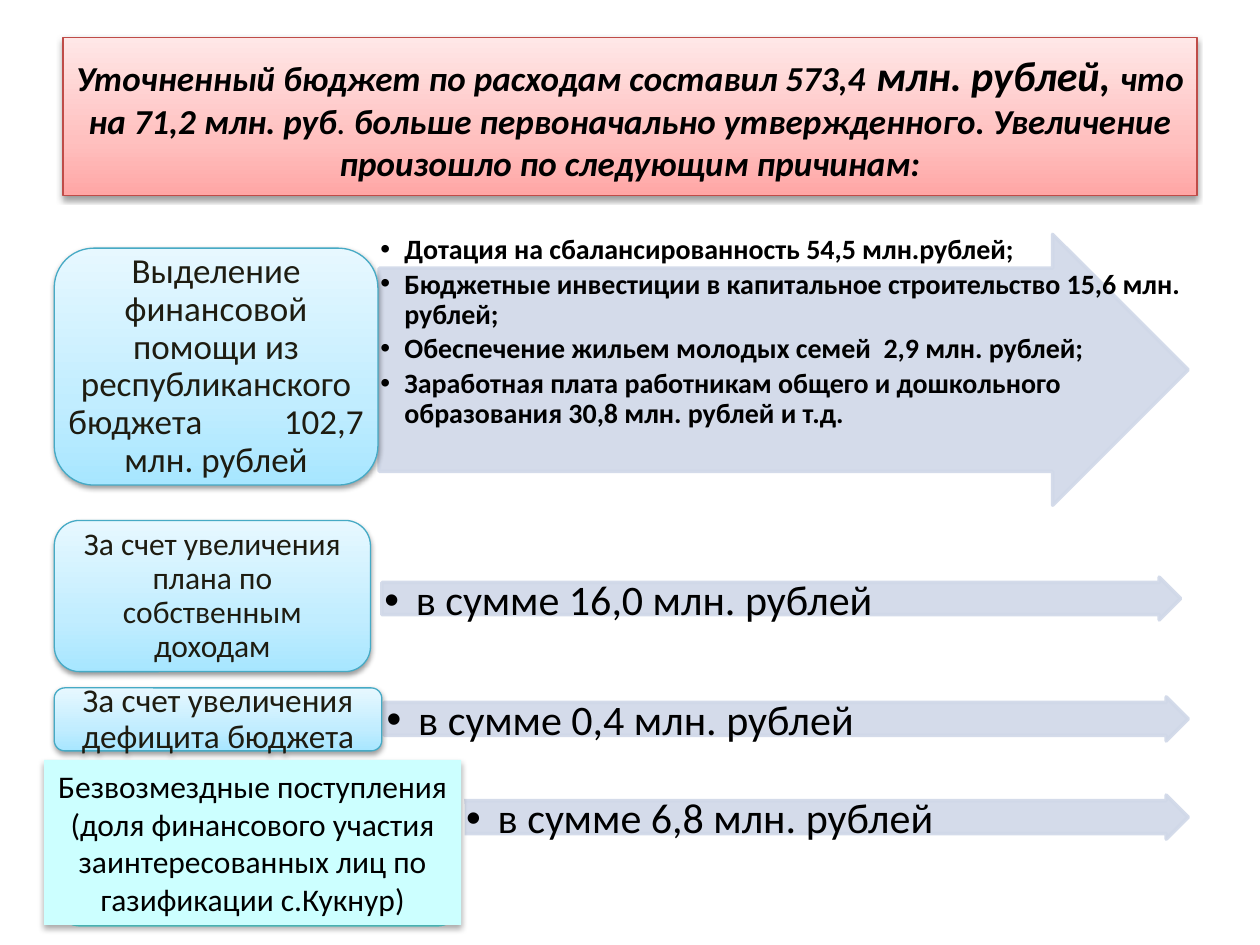
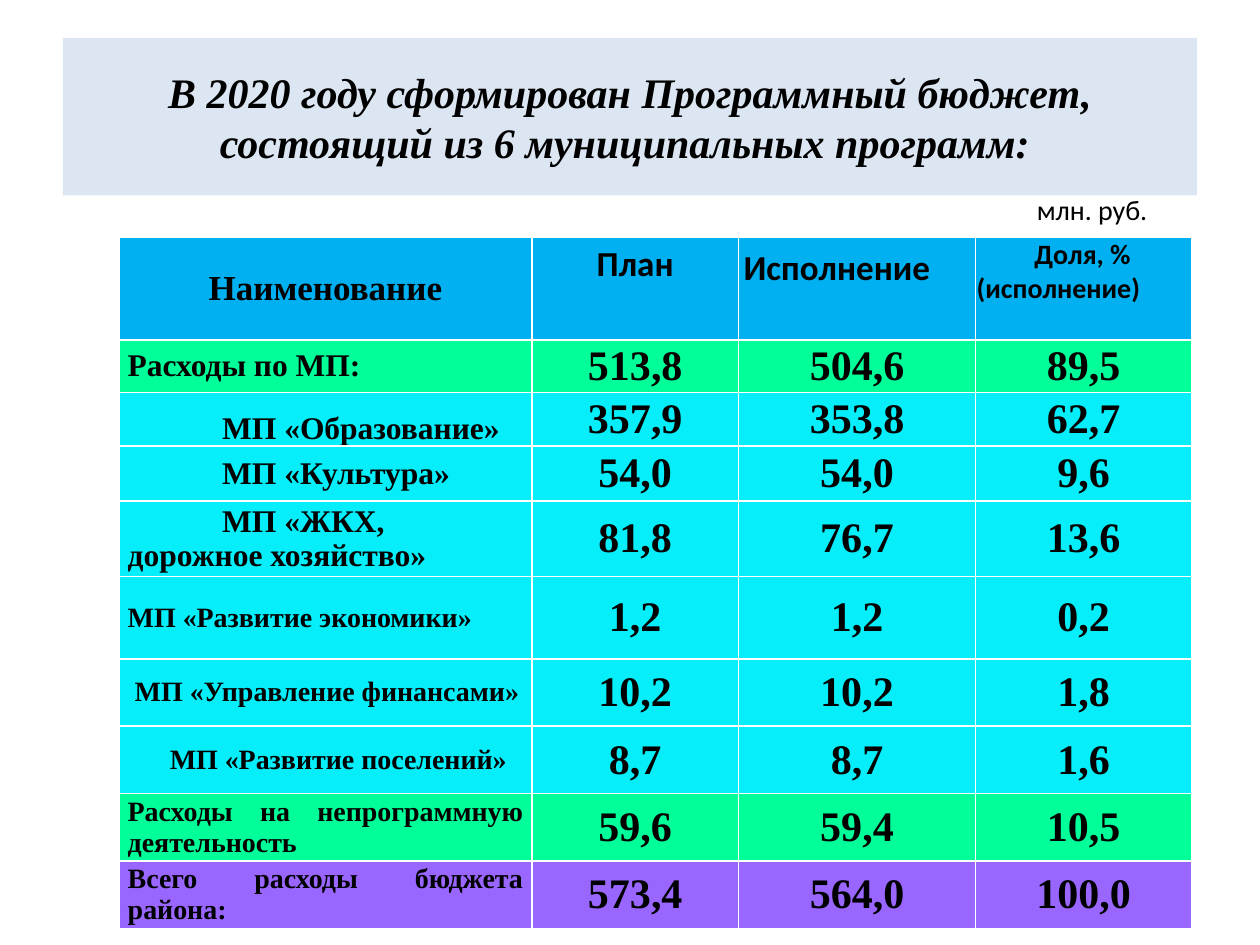
from copy import deepcopy

from lxml.etree import SubElement
from pptx import Presentation
from pptx.dml.color import RGBColor
from pptx.enum.shapes import MSO_SHAPE
from pptx.enum.text import MSO_ANCHOR, PP_ALIGN
from pptx.oxml.ns import qn
from pptx.util import Pt

BLACK = "000000"
ARROW_BLUE = "D0D8E8"
LABEL_INK = "1E1C11"
RED_GRADIENT = ["FFA6A5", "FFC0BF", "FFE7E7"]
BLUE_GRADIENT = ["A7E6FF", "C1EDFF", "E7F8FF"]
GRADIENT_POSITIONS = [0, 0.35, 1]
GREEN, CYAN, VIOLET, HEADER_BLUE = "00FF99", "06EEFA", "9966FF", "00B0F0"
SERIF, SANS = "Times New Roman", "Calibri"
TITLE_BOX = (36, 21.6, 648, 90)
SOFT_SHADOW = {"alpha": 38, "blur": 3.1, "distance": 1.6}
CARD_SHADOW = {"alpha": 32, "blur": 3.5, "distance": 2.2}


def color(value):
    return RGBColor.from_string(value)


def apply_format(target, values):
    for name, value in values.items():
        setattr(target, name, value)


def margins(left, top, right, bottom):
    sides = ("left", "top", "right", "bottom")
    return {f"margin_{side}": Pt(value) for side, value in zip(sides, (left, top, right, bottom))}


def font_format(size, name=SANS, **extra):
    return {"size": Pt(size), "name": name, **extra}


def write_run(paragraph, text, font, ink=BLACK, spacing=None):
    run = paragraph.add_run()
    run.text = text
    apply_format(run.font, font)
    run.font.color.rgb = color(ink)
    if spacing:
        run._r.get_or_add_rPr().set("spc", str(spacing * 100))


def set_indent(paragraph, left, first_line):
    properties = paragraph._p.get_or_add_pPr()
    properties.set("marL", str(Pt(left)))
    properties.set("indent", str(Pt(first_line)))
    return properties


def fill_gradient(shape, colors):
    shape.fill.gradient()
    shape.fill.gradient_angle = 90
    stop_list = shape._element.spPr.find(".//" + qn("a:gsLst"))
    stop_list.append(deepcopy(stop_list[0]))
    for stop, position, value in zip(shape.fill.gradient_stops, GRADIENT_POSITIONS, colors):
        stop.position = position
        stop.color.rgb = color(value)


def add_shadow(shape, alpha, blur, distance):
    effects = shape._element.spPr.find(qn("a:effectLst"))
    shadow = SubElement(effects, qn("a:outerShdw"), blurRad=str(Pt(blur)),
                        dist=str(Pt(distance)), dir="5400000", rotWithShape="0")
    ink = SubElement(shadow, qn("a:srgbClr"), val=BLACK)
    SubElement(ink, qn("a:alpha"), val=str(alpha * 1000))


def add_panel(slide, kind, box, fill, line=None, line_width=0.75, shadow=None):
    shape = slide.shapes.add_shape(kind, *map(Pt, box))
    shape.shadow.inherit = False
    if isinstance(fill, list):
        fill_gradient(shape, fill)
    else:
        shape.fill.solid()
        shape.fill.fore_color.rgb = color(fill)
    if line:
        shape.line.color.rgb = color(line)
        shape.line.width = Pt(line_width)
    else:
        shape.line.fill.background()
    if shadow:
        add_shadow(shape, **shadow)
    apply_format(shape.text_frame, {"word_wrap": True, "vertical_anchor": MSO_ANCHOR.MIDDLE})
    return shape


def add_title(slide, runs, fill, line=None, shadow=None):
    shape = add_panel(slide, MSO_SHAPE.RECTANGLE, TITLE_BOX, fill, line, shadow=shadow)
    paragraph = shape.text_frame.paragraphs[0]
    paragraph.alignment = PP_ALIGN.CENTER
    for text, font in runs:
        write_run(paragraph, text, font)


def add_text_box(slide, box, frame_margins):
    frame = slide.shapes.add_textbox(*map(Pt, box)).text_frame
    apply_format(frame, {"word_wrap": True, **frame_margins})
    return frame


def add_reason_arrow(slide, box, items, font, inset, hanging, gap):
    arrow = add_panel(slide, MSO_SHAPE.RIGHT_ARROW, box, ARROW_BLUE, ARROW_BLUE, 2)
    arrow.adjustments[0] = 0.75
    arrow.adjustments[1] = 0.5
    for solid in arrow._element.spPr.iter(qn("a:srgbClr")):
        SubElement(solid, qn("a:alpha"), val="90000")
    frame = add_text_box(slide, box, margins(inset, inset, inset, inset))
    for index, item in enumerate(items):
        paragraph = frame.add_paragraph() if index else frame.paragraphs[0]
        apply_format(paragraph, {"line_spacing": 0.9, "space_after": Pt(gap)})
        properties = set_indent(paragraph, hanging, -hanging)
        SubElement(properties, qn("a:buFont"), typeface="Arial")
        SubElement(properties, qn("a:buChar"), char="•")
        write_run(paragraph, item, font)


def add_reason_label(slide, box, parts, size):
    shape = add_panel(slide, MSO_SHAPE.ROUNDED_RECTANGLE, box, BLUE_GRADIENT, "46AAC5",
                      shadow=SOFT_SHADOW)
    apply_format(shape.text_frame, margins(1, 0, 1, 0))
    paragraph = shape.text_frame.paragraphs[0]
    apply_format(paragraph, {"alignment": PP_ALIGN.CENTER, "line_spacing": 0.9})
    for text, spacing in parts:
        write_run(paragraph, text, font_format(size), LABEL_INK, spacing)


def add_donation_card(slide, box):
    left, top, width, height = box
    add_panel(slide, MSO_SHAPE.ROUNDED_RECTANGLE, (left + 6, top + 12, width - 5, height - 10),
              "66FFFF", "FFFFFF", 2)
    card = add_panel(slide, MSO_SHAPE.RECTANGLE, box, "CCFFFF", shadow=CARD_SHADOW)
    paragraph = card.text_frame.paragraphs[0]
    paragraph.alignment = PP_ALIGN.CENTER
    write_run(paragraph, "Безвозмездные поступления (доля финансового участия "
                         "заинтересованных лиц по газификации с.Кукнур)", font_format(18))


def build_reasons_slide(slide):
    plain = font_format(20, bold=True, italic=True)
    add_title(slide, [
        ("Уточненный бюджет по расходам составил 573,4", plain),
        (" млн. рублей, ", {**plain, "size": Pt(24)}),
        ("что на 71,2 млн. руб", plain),
        (". ", {**plain, "bold": False}),
        ("больше первоначально утвержденного. Увеличение произошло по следующим причинам:", plain),
    ], RED_GRADIENT, "BF4C48", SOFT_SHADOW)

    add_reason_arrow(slide, (216.7, 133.9, 462.2, 154.8), [
        "Дотация на сбалансированность 54,5 млн.рублей;",
        "Бюджетные инвестиции в капитальное строительство 15,6 млн. рублей;",
        "Обеспечение жильем молодых семей  2,9 млн. рублей;",
        "Заработная плата работникам общего и дошкольного образования 30,8 млн. рублей и т.д.",
    ], font_format(16, bold=True), 0.7, 13.7, 2.4)
    for box, amount in [
        ((218.2, 329.8, 456.5, 24.5), "16,0"),
        ((219.6, 398.2, 459.4, 25.2), "0,4"),
        ((265, 454.3, 414, 25.2), "6,8"),
    ]:
        add_reason_arrow(slide, box, [f"в сумме {amount} млн. рублей"],
                         font_format(24), 1.4, 18, 0)

    for top, width, height, size, parts in [
        (141.8, 185, 135.4, 20, [
            ("Выделение финансовой помощи из республиканского бюджета", None),
            (" ", 42),
            ("102,7 млн. рублей", None)]),
        (297.4, 180.7, 86.4, 18, [("За счет увеличения плана по собственным доходам", None)]),
        (393.1, 187.2, 36, 19, [("За счет увеличения дефицита бюджета", None)]),
    ]:
        add_reason_label(slide, (31, top, width, height), parts, size)
    add_donation_card(slide, (25.2, 434.2, 238.3, 94.3))


def write_cell(cell, text, font, fill, cell_margins, anchor=MSO_ANCHOR.MIDDLE,
               alignment=PP_ALIGN.CENTER, first_line=0):
    cell.fill.solid()
    cell.fill.fore_color.rgb = color(fill)
    apply_format(cell, {"vertical_anchor": anchor, **cell_margins})
    paragraph = cell.text_frame.paragraphs[0]
    paragraph.alignment = alignment
    set_indent(paragraph, 0, first_line)
    for index, line in enumerate(text.split("\n")):
        if index:
            paragraph.add_line_break()
        write_run(paragraph, line, font)


def add_program_table(slide, box):
    widths = [236, 118, 135.5, 123.5]
    heights = [59, 30, 30.5, 31.5, 41, 47] + [38.5] * 4
    left, justify = PP_ALIGN.LEFT, PP_ALIGN.JUSTIFY
    middle, top, bottom = MSO_ANCHOR.MIDDLE, MSO_ANCHOR.TOP, MSO_ANCHOR.BOTTOM
    headers = [
        ("Наименование", 20, SERIF, margins(0.7, 0.7, 0.7, 0), middle, PP_ALIGN.CENTER, 0),
        ("План", 20, SANS, margins(7.2, 3.6, 7.2, 3.6), top, PP_ALIGN.CENTER, 0),
        ("Исполнение", 20, SANS, margins(3, 6, 0.7, 0), top, left, 0),
        ("Доля, % (исполнение)", 16, SANS, margins(0.7, 0.7, 0.7, 0), top, left, 33),
    ]
    rows = [
        ("Расходы по МП:", 18, 0, left, middle, GREEN, "513,8 504,6 89,5"),
        ("МП «Образование»", 18, 54, left, bottom, CYAN, "357,9 353,8 62,7"),
        ("МП «Культура»", 18, 54, left, middle, CYAN, "54,0 54,0 9,6"),
        ("МП «ЖКХ,\nдорожное хозяйство»", 18, 54, left, middle, CYAN, "81,8 76,7 13,6"),
        ("МП «Развитие экономики»", 16, 0, justify, middle, CYAN, "1,2 1,2 0,2"),
        ("МП «Управление финансами»", 16, 4, justify, middle, CYAN, "10,2 10,2 1,8"),
        ("МП «Развитие поселений»", 16, 24, justify, middle, CYAN, "8,7 8,7 1,6"),
        ("Расходы на непрограммную деятельность", 16, 0, justify, middle, GREEN, "59,6 59,4 10,5"),
        ("Всего расходы бюджета района:", 16, 0, justify, middle, VIOLET, "573,4 564,0 100,0"),
    ]
    table = slide.shapes.add_table(len(heights), len(widths), *map(Pt, box)).table
    for column, width in zip(table.columns, widths):
        column.width = Pt(width)
    for row, height in zip(table.rows, heights):
        row.height = Pt(height)

    for index, (text, size, name, inset, anchor, alignment, first_line) in enumerate(headers):
        write_cell(table.cell(0, index), text, font_format(size, name, bold=True), HEADER_BLUE,
                   inset, anchor, alignment, first_line)
    body_margins = margins(5, 0, 5, 0)
    for row, (name, size, first_line, alignment, anchor, fill, values) in enumerate(rows, 1):
        write_cell(table.cell(row, 0), name, font_format(size, SERIF, bold=True), fill,
                   body_margins, anchor, alignment, first_line)
        for column, value in enumerate(values.split(), 1):
            write_cell(table.cell(row, column), value, font_format(24, SERIF, bold=True),
                       fill, body_margins)


def build_programs_slide(slide):
    add_title(slide, [("В 2020 году сформирован Программный бюджет, состоящий из 6 "
                       "муниципальных программ: ",
                       font_format(24, SERIF, bold=True, italic=True))], "DCE6F2")
    add_program_table(slide, (68, 135.3, 613, 393))
    frame = add_text_box(slide, (585.4, 106.6, 106.6, 26.6), margins(7.2, 3.6, 7.2, 3.6))
    write_run(frame.paragraphs[0], "млн. руб.", font_format(16))


def main():
    presentation = Presentation()
    apply_format(presentation, {"slide_width": Pt(720), "slide_height": Pt(540)})
    for build in (build_reasons_slide, build_programs_slide):
        build(presentation.slides.add_slide(presentation.slide_layouts[6]))
    presentation.save("out.pptx")


if __name__ == "__main__":
    main()
